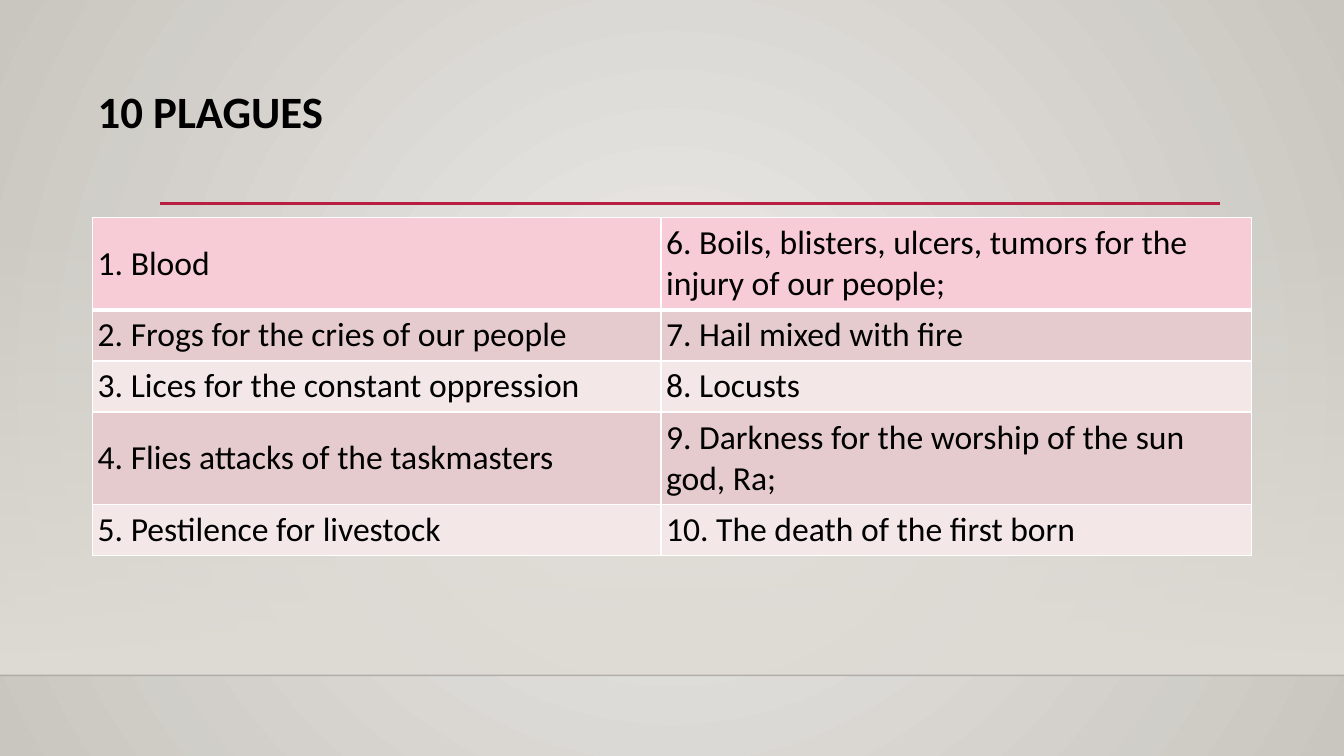
from lxml import etree
from pptx import Presentation
from pptx.dml.color import RGBColor
from pptx.enum.shapes import MSO_CONNECTOR, MSO_SHAPE
from pptx.enum.text import MSO_ANCHOR, MSO_AUTO_SIZE, PP_ALIGN
from pptx.oxml.ns import qn
from pptx.util import Pt

STRAIGHT = MSO_CONNECTOR.STRAIGHT
RECTANGLE = MSO_SHAPE.RECTANGLE
TOP, MIDDLE = MSO_ANCHOR.TOP, MSO_ANCHOR.MIDDLE
NO_AUTOFIT = MSO_AUTO_SIZE.NONE
LEFT = PP_ALIGN.LEFT

WIDTH, HEIGHT = 960, 540
CONTENT_LEFT = 66.2
FLOOR_TOP = 482.4
PLAGUES = [
    ("1. Blood", "6. Boils, blisters, ulcers, tumors for the injury of our people;"),
    ("2. Frogs for the cries of our people", "7. Hail mixed with fire"),
    ("3. Lices for the constant oppression", "8. Locusts"),
    ("4. Flies attacks of the taskmasters", "9. Darkness for the worship of the sun god, Ra;"),
    ("5. Pestilence for livestock", "10. The death of the first born"),
]


def color(value):
    return RGBColor.from_string(value)


def set_alpha(color_element, percent):
    etree.SubElement(color_element, qn("a:alpha"), val=str(percent * 1000))


class SlideBuilder:
    font_name = "Calibri"
    text_color = "000000"
    border_color = "FFFFFF"
    header_fill = "F7CCD6"
    band_fills = ("F3E7E8", "E5CBCD")
    inset = Pt(3.6)

    def __init__(self, presentation):
        self.slide = presentation.slides.add_slide(presentation.slide_layouts[5])

    def gradient(self, fill, start, end):
        fill.gradient()
        for stop, value in zip(fill.gradient_stops, (start, end)):
            stop.color.rgb = color(value)

    def background(self, center, edge):
        fill = self.slide.background.fill
        self.gradient(fill, center, edge)
        linear = next(self.slide.element.iter(qn("a:lin")))
        circle = etree.Element(qn("a:path"), path="circle")
        etree.SubElement(circle, qn("a:fillToRect"), l="50000", t="50000", r="50000", b="50000")
        linear.getparent().replace(linear, circle)

    def fading_panel(self, left, top, width, height, value):
        shape = self.slide.shapes.add_shape(RECTANGLE, Pt(left), Pt(top), Pt(width), Pt(height))
        shape.shadow.inherit = False
        shape.line.fill.background()
        self.gradient(shape.fill, value, value)
        shape.fill.gradient_angle = 270
        set_alpha(next(shape.element.spPr.iter(qn("a:srgbClr"))), 0)

    def rule(self, left, right, y, value, weight, alpha=100):
        connector = self.slide.shapes.add_connector(STRAIGHT, Pt(left), Pt(y), Pt(right), Pt(y))
        connector.line.color.rgb = color(value)
        connector.line.width = Pt(weight)
        properties = connector.element.spPr
        if alpha < 100:
            set_alpha(next(properties.iter(qn("a:srgbClr"))), alpha)
        etree.SubElement(properties, qn("a:effectLst"))

    def add_text(self, paragraph, text, size, bold=False):
        paragraph.alignment = LEFT
        run = paragraph.add_run()
        run.text = text
        run.font.name = self.font_name
        run.font.size = Pt(size)
        run.font.bold = bold
        run.font.color.rgb = color(self.text_color)

    def set_insets(self, target):
        target.margin_left = target.margin_right = self.inset
        target.margin_top = target.margin_bottom = self.inset

    def title(self, text, left, top, width, height):
        shape = self.slide.shapes.title
        shape.left, shape.top, shape.width, shape.height = Pt(left), Pt(top), Pt(width), Pt(height)
        shape.element.getparent().append(shape.element)
        frame = shape.text_frame
        frame.word_wrap = True
        frame.auto_size = NO_AUTOFIT
        frame.vertical_anchor = TOP
        self.set_insets(frame)
        paragraph = frame.paragraphs[0]
        paragraph.line_spacing = 0.9
        self.add_text(paragraph, text, 32, True)

    def borders(self, cell, top, bottom):
        properties = cell._tc.get_or_add_tcPr()
        for side, weight in (("L", 1), ("R", 1), ("T", top), ("B", bottom)):
            line = etree.SubElement(properties, qn(f"a:ln{side}"), w=str(Pt(weight)))
            solid = etree.SubElement(line, qn("a:solidFill"))
            etree.SubElement(solid, qn("a:srgbClr"), val=self.border_color)

    def table(self, rows, left, top, column_widths, row_height):
        frame = self.slide.shapes.add_table(
            len(rows), len(column_widths), Pt(left), Pt(top),
            Pt(sum(column_widths)), Pt(row_height * len(rows)))
        table = frame.table
        table.first_row = table.horz_banding = False
        for column, width in zip(table.columns, column_widths):
            column.width = Pt(width)
        for row_index, texts in enumerate(rows):
            table.rows[row_index].height = Pt(row_height)
            fill = self.band_fills[row_index % 2] if row_index else self.header_fill
            for column_index, text in enumerate(texts):
                cell = table.cell(row_index, column_index)
                cell.vertical_anchor = MIDDLE
                self.set_insets(cell)
                self.borders(cell, 3 if row_index == 1 else 1, 3 if row_index == 0 else 1)
                cell.fill.solid()
                cell.fill.fore_color.rgb = color(fill)
                self.add_text(cell.text_frame.paragraphs[0], text, 24)


def main():
    presentation = Presentation()
    presentation.slide_width, presentation.slide_height = Pt(WIDTH), Pt(HEIGHT)
    builder = SlideBuilder(presentation)
    builder.background("ECEAE7", "C9C6C0")
    builder.fading_panel(0, 159.1, WIDTH, FLOOR_TOP - 159.1, "DFDBD5")
    builder.rule(0, WIDTH, FLOOR_TOP, "000001", 1, 20)
    builder.rule(114.5, 871.2, 145.4, "B71E42", 2.5)
    builder.title("10 PLAGUES", CONTENT_LEFT, 60.5, 828, 104.4)
    builder.table(PLAGUES, CONTENT_LEFT, 155.5, (406, 422), 29.2)
    presentation.save("out.pptx")


if __name__ == "__main__":
    main()
